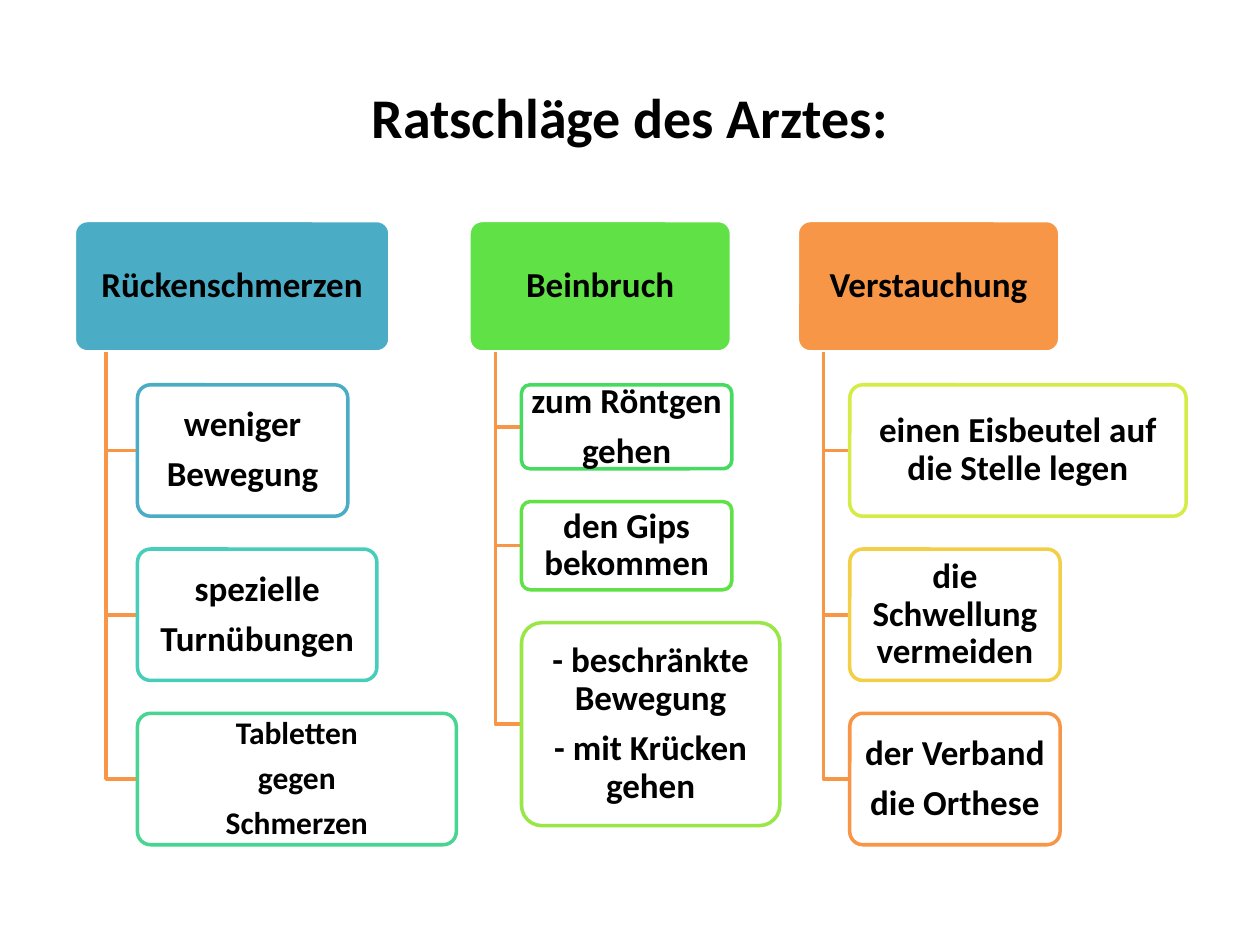
from dataclasses import dataclass

from lxml.etree import SubElement
from pptx import Presentation
from pptx.dml.color import RGBColor
from pptx.enum.shapes import MSO_SHAPE
from pptx.enum.text import MSO_ANCHOR, PP_ALIGN
from pptx.oxml.ns import qn
from pptx.shapes.autoshape import Shape
from pptx.slide import Slide
from pptx.util import Pt

BLACK = RGBColor(0x00, 0x00, 0x00)
WHITE = RGBColor(0xFF, 0xFF, 0xFF)
BLUE = RGBColor(0x4B, 0xAC, 0xC6)
TEAL = RGBColor(0x49, 0xCD, 0xBB)
MINT = RGBColor(0x48, 0xD4, 0x91)
EMERALD = RGBColor(0x47, 0xDA, 0x61)
GREEN = RGBColor(0x60, 0xE1, 0x46)
LIME = RGBColor(0x98, 0xE7, 0x46)
YELLOW = RGBColor(0xD5, 0xEC, 0x46)
GOLD = RGBColor(0xF2, 0xCF, 0x46)
ORANGE = RGBColor(0xF7, 0x96, 0x46)

FONT = "Calibri"
HEAD_TOP = 126
ROW_H = 75.1
GAP = ROW_H / 4
LINE_W = 2


@dataclass
class Advice:
    text: str
    color: RGBColor
    width: float = 120.2
    height: float = ROW_H
    size: float = 20


@dataclass
class Column:
    title: str
    color: RGBColor
    left: float
    width: float
    advice: list[Advice]


COLUMNS = [
    Column("Rückenschmerzen", BLUE, 42.5, 180.4, [
        Advice("weniger\nBewegung", BLUE),
        Advice("spezielle\nTurnübungen", TEAL, width=136.8),
        Advice("Tabletten\ngegen\nSchmerzen", MINT, width=182.2, size=18),
    ]),
    Column("Beinbruch", GREEN, 268, 150, [
        Advice("zum Röntgen\ngehen", EMERALD, height=48),
        Advice("den Gips bekommen", GREEN, height=50.4),
        Advice("- beschränkte Bewegung\n- mit Krücken gehen", LIME, width=147.6, height=116),
    ]),
    Column("Verstauchung", ORANGE, 455.6, 150, [
        Advice("einen Eisbeutel auf die Stelle legen", YELLOW, width=192.2),
        Advice("die Schwellung vermeiden", GOLD),
        Advice("der Verband\ndie Orthese", ORANGE),
    ]),
]


def write(sp: Shape, text: str, *, size: float = 20, spacing: float = 0.9,
          after: float = 0.35, inset: tuple[float, float] = (3, 2)) -> None:
    tf = sp.text_frame
    tf.word_wrap = True
    tf.vertical_anchor = MSO_ANCHOR.MIDDLE
    tf.margin_left = tf.margin_right = Pt(inset[0])
    tf.margin_top = tf.margin_bottom = Pt(inset[1])
    for i, line in enumerate(text.split("\n")):
        p = tf.add_paragraph() if i else tf.paragraphs[0]
        p.alignment = PP_ALIGN.CENTER
        p.line_spacing = spacing
        p.space_after = Pt(size * after)
        r = p.add_run()
        r.text = line
        r.font.name = FONT
        r.font.size = Pt(size)
        r.font.bold = True
        r.font.color.rgb = BLACK


def add_box(s: Slide, left: float, top: float, width: float, height: float,
            fill: RGBColor, line: RGBColor) -> Shape:
    sp = s.shapes.add_shape(MSO_SHAPE.ROUNDED_RECTANGLE,
                            Pt(left), Pt(top), Pt(width), Pt(height))
    sp.adjustments[0] = 0.1
    sp.shadow.inherit = False
    sp.fill.solid()
    sp.fill.fore_color.rgb = fill
    sp.line.color.rgb = line
    sp.line.width = Pt(LINE_W)
    return sp


def set_opacity(sp: Shape, percent: int) -> None:
    color = sp.fill._xPr.find(qn("a:solidFill"))[0]
    SubElement(color, qn("a:alpha")).set("val", str(percent * 1000))


def add_elbow(s: Slide, x: float, top: float, end_x: float, end_y: float) -> None:
    builder = s.shapes.build_freeform(Pt(x), Pt(top))
    builder.add_line_segments([(Pt(x), Pt(end_y)), (Pt(end_x), Pt(end_y))], close=False)
    sp = builder.convert_to_shape()
    sp.shadow.inherit = False
    sp.fill.background()
    sp.line.color.rgb = ORANGE
    sp.line.width = Pt(LINE_W)


def add_column(s: Slide, col: Column) -> None:
    head = add_box(s, col.left, HEAD_TOP, col.width, ROW_H, col.color, WHITE)
    write(head, col.title)
    stem_x = col.left + col.width * 0.1
    box_x = col.left + col.width * 0.2
    head_bottom = HEAD_TOP + ROW_H
    top = head_bottom + GAP
    for item in col.advice:
        add_elbow(s, stem_x, head_bottom, box_x, top + item.height / 2)
        sp = add_box(s, box_x, top, item.width, item.height, WHITE, item.color)
        set_opacity(sp, 90)
        write(sp, item.text, size=item.size)
        top += item.height + GAP


def main() -> None:
    prs = Presentation()
    prs.slide_width, prs.slide_height = Pt(720), Pt(540)
    s = prs.slides.add_slide(prs.slide_layouts[6])
    title = s.shapes.add_textbox(Pt(36), Pt(21.6), Pt(648), Pt(90))
    write(title, "Ratschläge des Arztes:", size=32, spacing=1, after=0, inset=(7.2, 3.6))
    for col in COLUMNS:
        add_column(s, col)
    prs.save("out.pptx")


if __name__ == "__main__":
    main()
